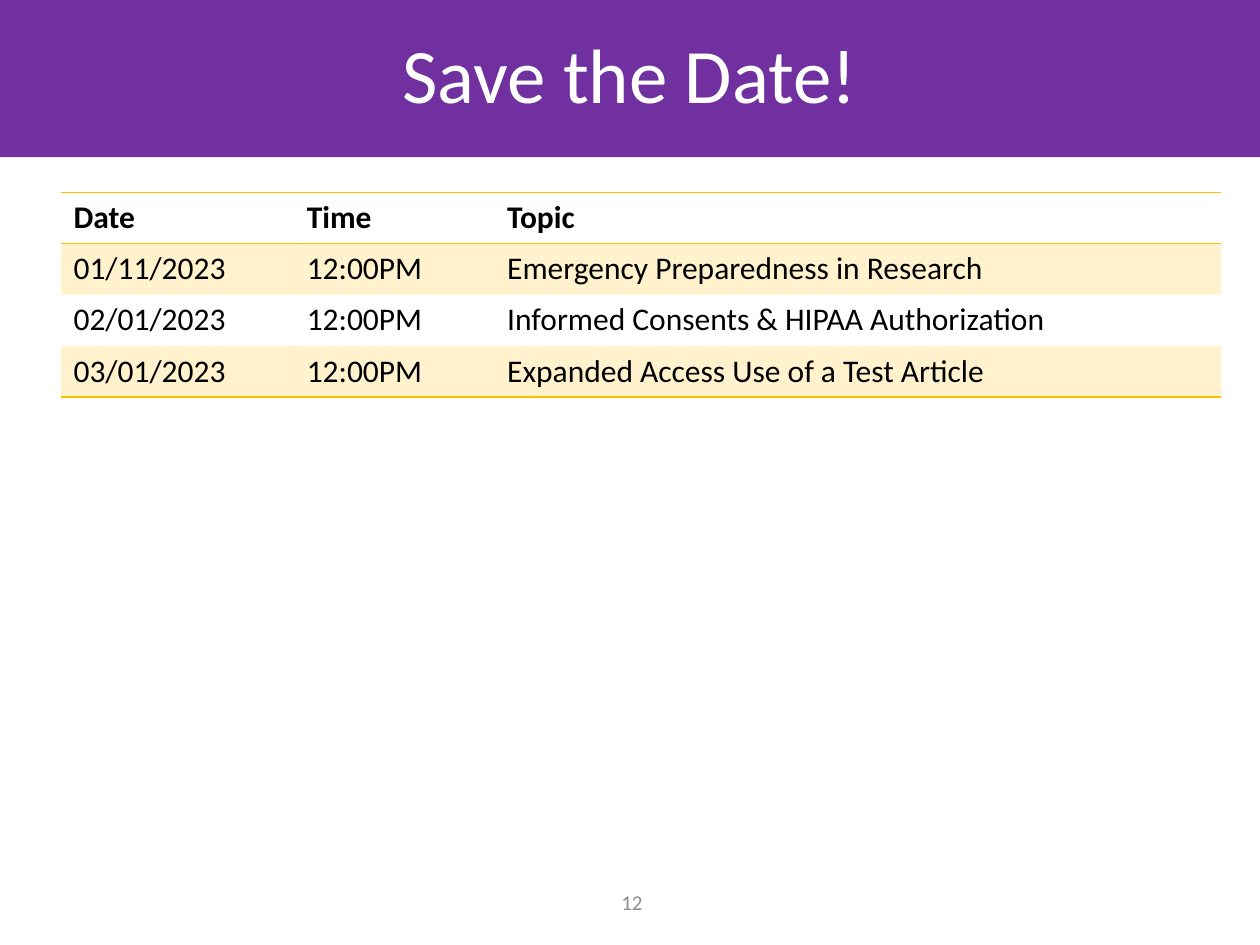
from lxml import etree
from pptx import Presentation
from pptx.dml.color import RGBColor
from pptx.enum.shapes import MSO_SHAPE
from pptx.enum.text import MSO_ANCHOR, PP_ALIGN
from pptx.oxml.ns import qn
from pptx.util import Cm, Pt

RECTANGLE = MSO_SHAPE.RECTANGLE
MIDDLE = MSO_ANCHOR.MIDDLE
CENTER = PP_ALIGN.CENTER

PURPLE = RGBColor(0x70, 0x30, 0xA0)
GOLD = RGBColor(0xFF, 0xC0, 0x00)
WHITE = RGBColor(0xFF, 0xFF, 0xFF)
BLACK = RGBColor(0x00, 0x00, 0x00)
GRAY = RGBColor(0x8C, 0x8C, 0x8C)

FONT = "Calibri"
PLAIN_TABLE_STYLE = "{2D5ABB26-0587-4C30-8999-92F81FD0307C}"
COLUMN_WIDTHS = (4.7, 4.04, 14.65)
SESSIONS = (
    ("Date", "Time", "Topic"),
    ("01/11/2023", "12:00PM", "Emergency Preparedness in Research"),
    ("02/01/2023", "12:00PM", "Informed Consents & HIPAA Authorization"),
    ("03/01/2023", "12:00PM", "Expanded Access Use of a Test Article"),
)


def add_run(paragraph, text, size, color, bold=False):
    run = paragraph.add_run()
    run.text = text
    run.font.name = FONT
    run.font.size = Pt(size)
    run.font.color.rgb = color
    run.font.bold = bold


def add_title_band(slide, left, top, width, height):
    band = slide.shapes.add_shape(RECTANGLE, Cm(left), Cm(top), Cm(width), Cm(height))
    band.shadow.inherit = False
    band.fill.solid()
    band.fill.fore_color.rgb = PURPLE
    band.line.fill.background()
    band.text_frame.vertical_anchor = MIDDLE
    paragraph = band.text_frame.paragraphs[0]
    paragraph.alignment = CENTER
    paragraph.line_spacing = 0.9
    add_run(paragraph, "Save the Date!", 44, WHITE)


def tint_cell(cell):
    cell.fill.solid()
    cell.fill.fore_color.rgb = GOLD
    color = cell._tc.tcPr.find(qn("a:solidFill"))[0]
    etree.SubElement(color, qn("a:alpha"), val="20000")


def add_border(cell, tag):
    properties = cell._tc.get_or_add_tcPr()
    line = etree.Element(qn(tag), w=str(Pt(1)))
    fill = etree.SubElement(line, qn("a:solidFill"))
    etree.SubElement(fill, qn("a:srgbClr"), val=str(GOLD))
    properties.insert(0, line)


def add_schedule(slide, left, top, width, height):
    frame = slide.shapes.add_table(
        len(SESSIONS), len(COLUMN_WIDTHS), Cm(left), Cm(top), Cm(width), Cm(height)
    )
    table = frame.table
    table._tbl.tblPr.find(qn("a:tableStyleId")).text = PLAIN_TABLE_STYLE
    for column, column_width in zip(table.columns, COLUMN_WIDTHS):
        column.width = Cm(column_width)
    last_row = len(SESSIONS) - 1
    for row_index, session in enumerate(SESSIONS):
        is_header = row_index == 0
        for column_index, text in enumerate(session):
            cell = table.cell(row_index, column_index)
            add_run(cell.text_frame.paragraphs[0], text, 18, BLACK, is_header)
            if row_index % 2:
                tint_cell(cell)
            else:
                cell.fill.background()
            if row_index in (0, last_row):
                add_border(cell, "a:lnB")
            if is_header:
                add_border(cell, "a:lnT")


def add_page_number(slide, left, top, width, height):
    box = slide.shapes.add_textbox(Cm(left), Cm(top), Cm(width), Cm(height))
    box.text_frame.word_wrap = True
    box.text_frame.vertical_anchor = MIDDLE
    paragraph = box.text_frame.paragraphs[0]
    paragraph.alignment = CENTER
    add_run(paragraph, "12", 12, GRAY)


def main():
    presentation = Presentation()
    presentation.slide_width = Cm(25.4)
    presentation.slide_height = Cm(19.05)
    slide = presentation.slides.add_slide(presentation.slide_layouts[6])
    add_page_number(slide, 11.89, 17.68, 1.7, 1.02)
    add_title_band(slide, 0, 0, 25.4, 3.17)
    add_schedule(slide, 1.23, 3.88, sum(COLUMN_WIDTHS), 4.12)
    presentation.save("out.pptx")


if __name__ == "__main__":
    main()
